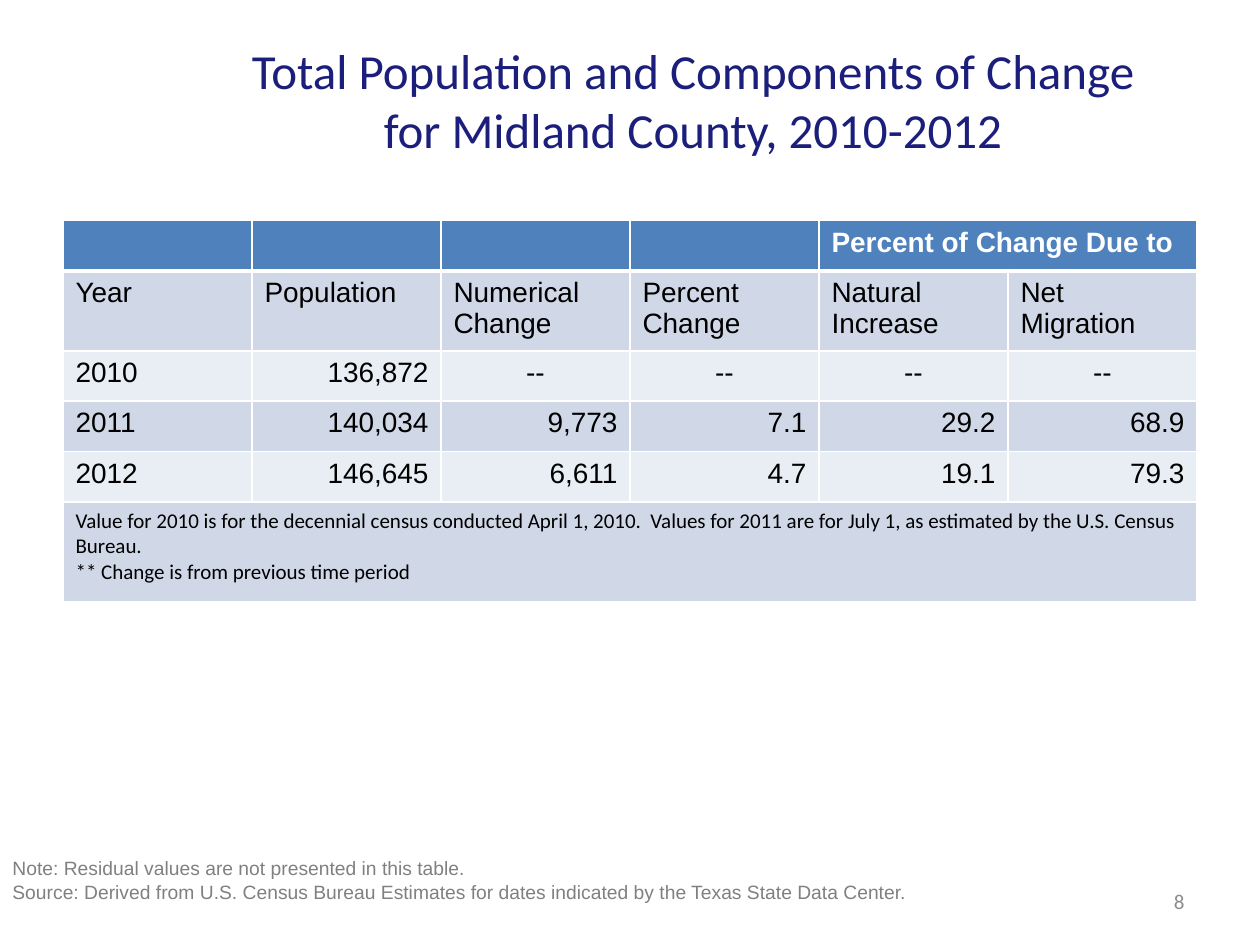
from lxml import etree
from pptx import Presentation, util as u
from pptx.dml.color import RGBColor
from pptx.enum import text
from pptx.oxml import ns

Pt = u.Pt
LEFT, MID, RIGHT = text.PP_ALIGN.LEFT, text.PP_ALIGN.CENTER, text.PP_ALIGN.RIGHT


def write(frame, lines, size, font, color, align=LEFT, bold=False):
    """Put each line in its own paragraph of the frame."""
    frame.word_wrap = True
    for i, line in enumerate(lines):
        para = frame.add_paragraph() if i else frame.paragraphs[0]
        para.alignment = align
        run = para.add_run()
        run.text = line
        run.font.size = Pt(size)
        run.font.name = font
        run.font.bold = bold
        run.font.color.rgb = RGBColor.from_string(color)


def paint(cell, color, base):
    """Give a cell white borders, the bottom one base points wide, and a fill."""
    props = cell._tc.get_or_add_tcPr()
    for side, width in (("L", 1), ("R", 1), ("T", 1), ("B", base)):
        line = etree.SubElement(props, ns.qn("a:ln" + side), w=str(Pt(width)))
        fill = etree.SubElement(line, ns.qn("a:solidFill"))
        etree.SubElement(fill, ns.qn("a:srgbClr"), val="FFFFFF")
    cell.fill.solid()
    cell.fill.fore_color.rgb = RGBColor.from_string(color)


deck = Presentation()
deck.slide_width, deck.slide_height = Pt(720), Pt(540)
slide = deck.slides.add_slide(deck.slide_layouts[6])

# Title
title = slide.shapes.add_textbox(Pt(126), Pt(18), Pt(540), Pt(78)).text_frame
title.vertical_anchor = text.MSO_ANCHOR.MIDDLE
write(title, ["Total Population and Components of Change for Midland County, 2010-2012"],
      28, "Calibri", "1B1E7A", MID)

# Population table
rows = [
    ["", "", "", "", "Percent of Change Due to", ""],
    ["Year", "Population", "Numerical Change", "Percent Change",
     "Natural Increase", "Net Migration"],
    ["2010", "136,872", "--", "--", "--", "--"],
    ["2011", "140,034", "9,773", "7.1", "29.2", "68.9"],
    ["2012", "146,645", "6,611", "4.7", "19.1", "79.3"],
    [""] * 6,
]
notes = [
    "Value for 2010 is for the decennial census conducted April 1, 2010.  "
    "Values for 2011 are for July 1, as estimated by the U.S. Census Bureau.",
    "** Change is from previous time period",
]
highs = [28.8, 45, 28.8, 28.8, 28.8, 57]
table = slide.shapes.add_table(6, 6, Pt(36), Pt(126), Pt(648), Pt(sum(highs))).table
for r, (row, high) in enumerate(zip(rows, highs)):
    table.rows[r].height = Pt(high)
    head = r == 0
    shade = "4F81BD" if head else "D0D8E8" if r % 2 else "E9EDF4"
    for c, word in enumerate(row):
        cell = table.cell(r, c)
        paint(cell, shade, 3 if head else 1)
        if word:
            align = LEFT if r < 2 or c == 0 else MID if word == "--" else RIGHT
            write(cell.text_frame, [word], 16, "Arial",
                  "FFFFFF" if head else "000000", align, head)
table.cell(0, 4).merge(table.cell(0, 5))
table.cell(5, 0).merge(table.cell(5, 5))
write(table.cell(5, 0).text_frame, notes, 12, "Calibri", "000000")

# Page number and source note
page = slide.shapes.add_textbox(Pt(516), Pt(500.5), Pt(168), Pt(28.8)).text_frame
page.vertical_anchor = text.MSO_ANCHOR.MIDDLE
write(page, ["8"], 12, "Calibri", "8C8C8C", RIGHT)
source = slide.shapes.add_textbox(Pt(0), Pt(486), Pt(630), Pt(46.8)).text_frame
write(source, [
    "Note: Residual values are not presented in this table.",
    "Source: Derived from U.S. Census Bureau Estimates for dates indicated "
    "by the Texas State Data Center.",
], 11, "Arial", "808080")

deck.save("out.pptx")
